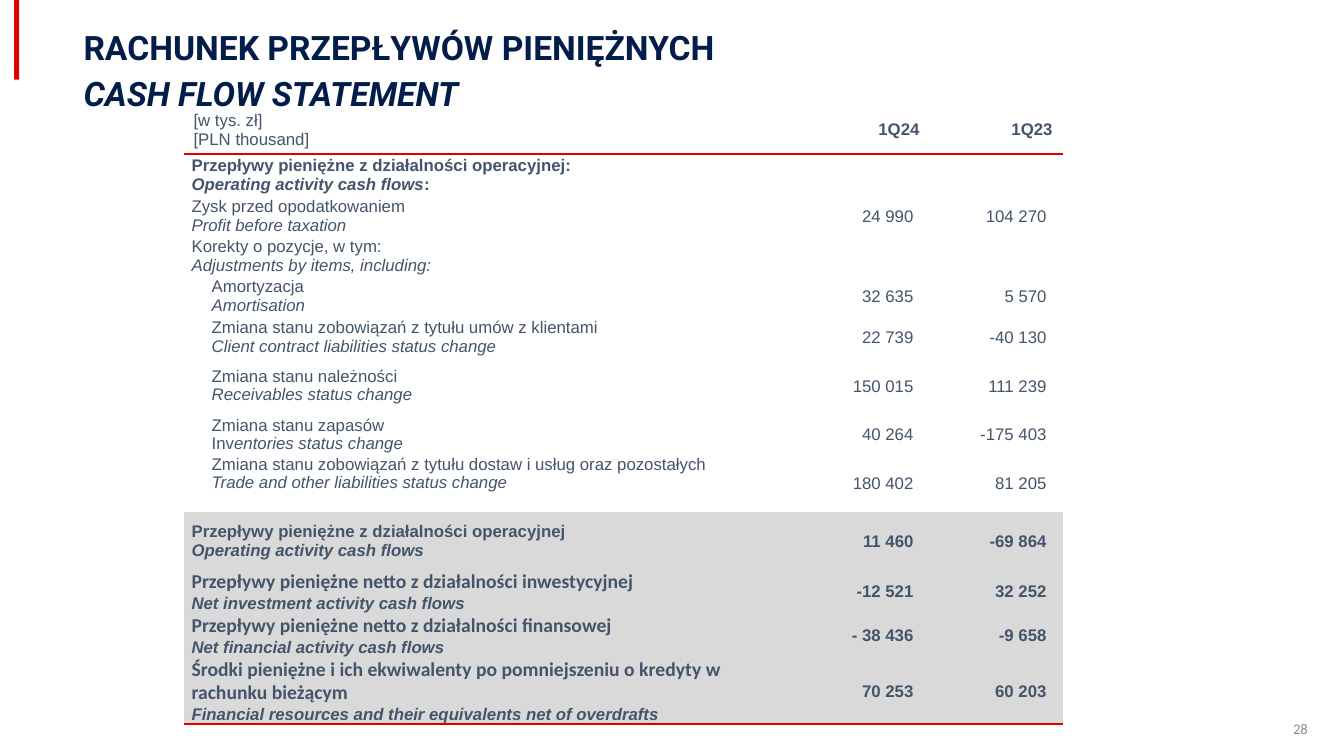
from lxml import etree
from pptx import Presentation
from pptx.dml.color import RGBColor
from pptx.enum import shapes, text
from pptx.oxml import ns
from pptx.util import Inches, Pt

RED = RGBColor(0xE1, 0x00, 0x00)
NAVY = RGBColor(0x02, 0x1D, 0x49)
SLATE = RGBColor(0x44, 0x54, 0x6A)
GREY = RGBColor(0x8C, 0x8C, 0x8C)
BAND = RGBColor(0xD9, 0xD9, 0xD9)
PLAIN_TABLE = "{2D5ABB26-0587-4C30-8999-92F81FD0307C}"
RIGHT = text.PP_ALIGN.RIGHT
MIDDLE = text.MSO_ANCHOR.MIDDLE
TOP = text.MSO_ANCHOR.TOP

HEADER = ("[w tys. zł]", "[PLN thousand]", "1Q24", "1Q23")
# Polish label, English label, 1Q24, 1Q23, row height
OPENING = [
    ("Przepływy pieniężne z działalności operacyjnej:",
     "Operating activity cash flows", "", "", 0.41),
    ("Zysk przed opodatkowaniem", "Profit before taxation",
     "24 990", "104 270", 0.38),
    ("Korekty o pozycje, w tym:", "Adjustments by items, including:",
     "", "", 0.38),
]
ADJUSTMENTS = [
    ("Amortyzacja", "Amortisation", "32 635", "5 570", 0.38),
    ("Zmiana stanu zobowiązań z tytułu umów z klientami",
     "Client contract liabilities status change",
     "22 739", "-40 130", 0.38),
    ("Zmiana stanu należności", "Receivables status change",
     "150 015", "111 239", 0.57),
    ("Zmiana stanu zapasów", "Inventories status change",
     "40 264", "-175 403", 0.38),
    ("Zmiana stanu zobowiązań z tytułu dostaw i usług oraz pozostałych",
     "Trade and other liabilities status change",
     "180 402", "81 205", 0.57),
]
TOTALS = [
    ("Przepływy pieniężne z działalności operacyjnej",
     "Operating activity cash flows", "11 460", "-69 864", 0.57),
    ("Przepływy pieniężne netto z działalności inwestycyjnej",
     "Net investment activity cash flows", "-12 521", "32 252", 0.43),
    ("Przepływy pieniężne netto z działalności finansowej",
     "Net financial activity cash flows", "- 38 436", "-9 658", 0.43),
    ("Środki pieniężne i ich ekwiwalenty po pomniejszeniu o kredyty "
     "w rachunku bieżącym",
     "Financial resources and their equivalents net of overdrafts",
     "70 253", "60 203", 0.65),
]


def add_span(para, words, size=12, font="Arial", color=SLATE,
             bold=False, italic=False):
    span = para.add_run()
    span.text = words
    span.font.size = Pt(size)
    span.font.name = font
    span.font.color.rgb = color
    span.font.bold = bold
    span.font.italic = italic


def add_text(page, words, left, top, width, height, align=None,
             spacing=None, **style):
    box = page.shapes.add_textbox(*map(Inches, (left, top, width, height)))
    box.text_frame.word_wrap = True
    box.text_frame.vertical_anchor = MIDDLE
    para = box.text_frame.paragraphs[0]
    para.alignment = align
    para.line_spacing = spacing
    add_span(para, words, **style)


def set_cell(cell, lines, insets, align=None, fill=None, anchor=MIDDLE):
    """Each line is a list of (words, style) spans."""
    (cell.margin_left, cell.margin_top,
     cell.margin_right, cell.margin_bottom) = map(Inches, insets)
    cell.vertical_anchor = anchor
    if fill is None:
        cell.fill.background()
    else:
        cell.fill.solid()
        cell.fill.fore_color.rgb = fill
    for index, spans in enumerate(lines):
        frame = cell.text_frame
        para = frame.add_paragraph() if index else frame.paragraphs[0]
        para.alignment = align
        for words, style in spans:
            add_span(para, words, **style)


def add_rule_below(row):
    for cell in row.cells:
        line = etree.Element(ns.qn("a:lnB"), w=str(Pt(1.5)))
        fill = etree.SubElement(line, ns.qn("a:solidFill"))
        etree.SubElement(fill, ns.qn("a:srgbClr"), val=str(RED))
        cell._tc.get_or_add_tcPr().insert(0, line)


def label_lines(polish, english, bold, polish_style):
    slanted = [(english, {"bold": bold, "italic": True})]
    if polish.startswith("Przepływy") and polish.endswith(":"):
        slanted.append((":", {"bold": bold}))
    if english.startswith("Inventories"):
        slanted = [("Inv", {}), ("entories status change", {"italic": True})]
    return [[(polish, {"bold": bold, **polish_style})], slanted]


def fill_row(row, entry, indent=0.08, bold=False, fill=None,
             anchor=MIDDLE, polish_style=None):
    polish, english, *amounts, height = entry
    row.height = Inches(height)
    label, *values = row.cells
    set_cell(label, label_lines(polish, english, bold, polish_style or {}),
             (indent, 0, 0.02, 0), fill=fill, anchor=anchor)
    for cell, amount in zip(values, amounts):
        lines = [[(amount, {"bold": bold})]] if amount else []
        set_cell(cell, lines, (0.01, 0.01 if amount else 0, 0.16, 0),
                 RIGHT, fill)


def add_cash_flow_table(page):
    count = 1 + len(OPENING) + len(ADJUSTMENTS) + len(TOTALS)
    frame = page.shapes.add_table(count, 3, Inches(1.82), Inches(1.05),
                                  Inches(8.72), Inches(6))
    table = frame.table
    table.first_row = table.horz_banding = False
    table._tbl.tblPr.find(ns.qn("a:tableStyleId")).text = PLAIN_TABLE
    for column, width in zip(table.columns, (6.08, 1.32, 1.32)):
        column.width = Inches(width)
    rows = iter(table.rows)

    # Header
    header = next(rows)
    header.height = Inches(0.47)
    polish, english, *quarters = HEADER
    unit, *heads = header.cells
    insets = (0.1, 0.04, 0.1, 0.04)
    set_cell(unit, [[(polish, {})], [(english, {})]], insets)
    for cell, quarter in zip(heads, quarters):
        set_cell(cell, [[(quarter, {"bold": True})]], insets, RIGHT)
    add_rule_below(header)

    # Operating activity and its adjustments
    for entry in OPENING:
        fill_row(next(rows), entry, bold=entry is OPENING[0])
    for entry in ADJUSTMENTS:
        fill_row(next(rows), entry, indent=0.28,
                 anchor=TOP if entry is ADJUSTMENTS[-1] else MIDDLE)

    # Shaded totals
    for entry in TOTALS:
        style = {} if entry is TOTALS[0] else {"size": 14, "font": "Calibri"}
        row = next(rows)
        fill_row(row, entry, bold=True, fill=BAND, polish_style=style)
    add_rule_below(row)


def add_accent(page):
    bar = page.shapes.add_shape(shapes.MSO_SHAPE.RECTANGLE, Inches(0.14), 0,
                                Inches(0.05), Inches(0.79))
    bar.shadow.inherit = False
    bar.fill.solid()
    bar.fill.fore_color.rgb = RED
    bar.line.fill.background()


def main():
    deck = Presentation()
    deck.slide_width, deck.slide_height = Inches(13.33), Inches(7.5)
    page = deck.slides.add_slide(deck.slide_layouts[6])
    add_accent(page)
    # Titles
    heading = dict(size=24, font="Roboto", color=NAVY, bold=True, spacing=0.9)
    add_text(page, "RACHUNEK PRZEPŁYWÓW PIENIĘŻNYCH",
             0.73, 0.2, 12.25, 0.58, **heading)
    add_text(page, "CASH FLOW STATEMENT",
             0.73, 0.66, 12.25, 0.58, italic=True, **heading)
    add_cash_flow_table(page)
    # Page number
    add_text(page, "28", 9.52, 7.03, 3.55, 0.4, align=RIGHT,
             size=10.5, font="Calibri", color=GREY)
    deck.save("out.pptx")


if __name__ == "__main__":
    main()
